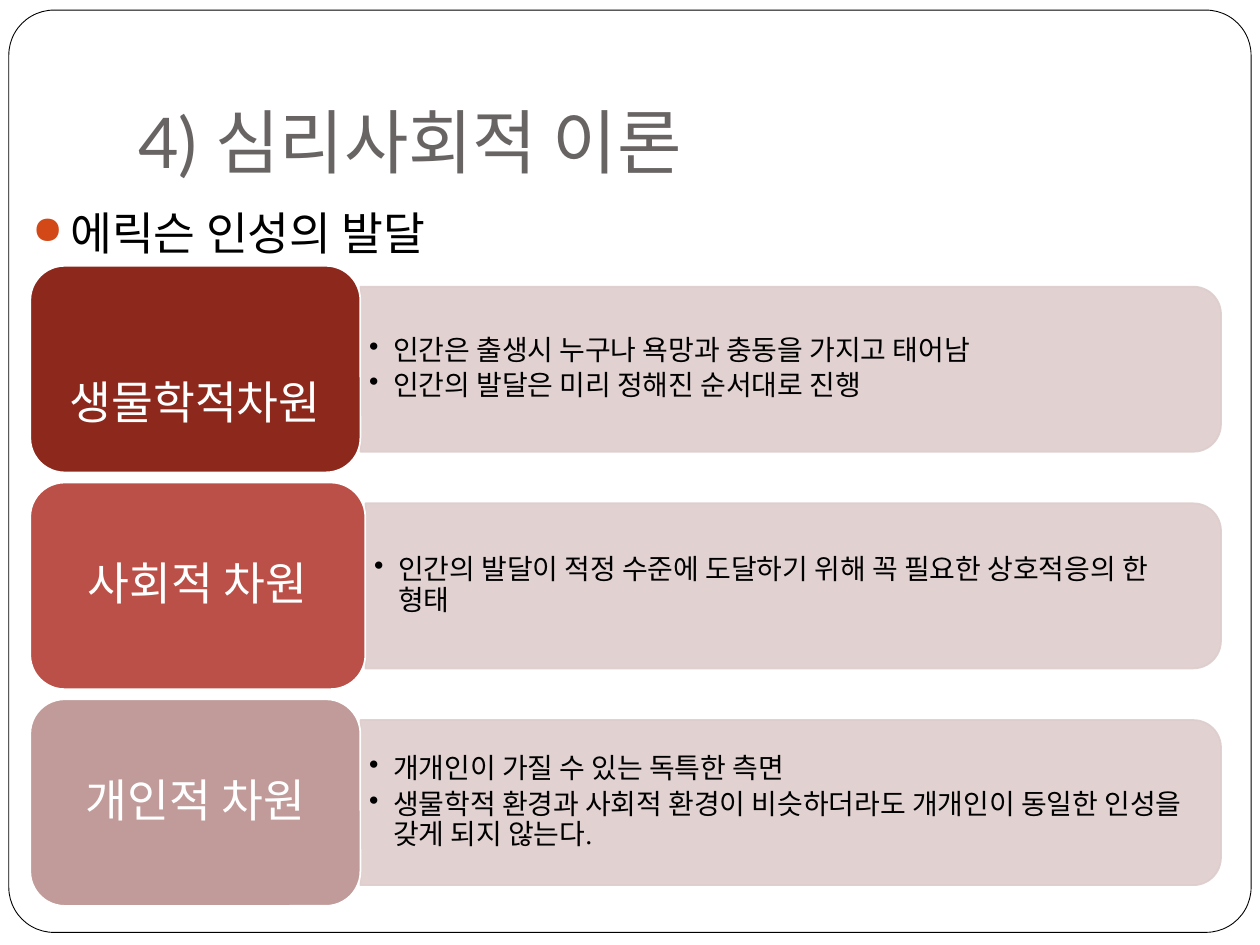
from lxml import etree
from pptx import Presentation
from pptx.dml.color import RGBColor
from pptx.enum.shapes import MSO_SHAPE
from pptx.enum.text import MSO_ANCHOR, PP_ALIGN
from pptx.oxml.ns import qn
from pptx.util import Inches, Pt


def write(frame, lines, margins, bullet=None, indent=0, **style):
    """Fill a text frame; margins run left, top, right, bottom in inches."""
    frame.word_wrap = True
    frame.vertical_anchor = style["anchor"]
    for side, margin in zip(("left", "top", "right", "bottom"), margins):
        setattr(frame, f"margin_{side}", Inches(margin))
    for number, line in enumerate(lines):
        paragraph = frame.paragraphs[0] if number == 0 else frame.add_paragraph()
        for name, value in style["paragraph"].items():
            setattr(paragraph, name, value)
        run = paragraph.add_run()
        run.text = line
        run.font.name = style["font"]
        run.font.size = Pt(style["size"])
        run.font.color.rgb = RGBColor.from_string(style["color"])
        if bullet:
            character, bullet_color, percent = bullet
            properties = paragraph._p.get_or_add_pPr()
            properties.set("marL", str(Inches(indent)))
            properties.set("indent", str(-Inches(indent)))
            color = etree.SubElement(properties, qn("a:buClr"))
            etree.SubElement(color, qn("a:srgbClr"), val=bullet_color)
            etree.SubElement(properties, qn("a:buSzPct"), val=str(percent * 1000))
            etree.SubElement(properties, qn("a:buChar"), char=character)


def add_box(kind, left, top, width, height, fill, line, line_width):
    box = slide.shapes.add_shape(
        kind, Inches(left), Inches(top), Inches(width), Inches(height))
    box.shadow.inherit = False
    box.fill.solid()
    box.fill.fore_color.rgb = RGBColor.from_string(fill)
    box.line.color.rgb = RGBColor.from_string(line)
    box.line.width = Pt(line_width)
    return box


presentation = Presentation()
presentation.slide_width = Inches(10)
presentation.slide_height = Inches(7.5)
slide = presentation.slides.add_slide(presentation.slide_layouts[6])

frame_border = add_box(
    MSO_SHAPE.ROUNDED_RECTANGLE, 0.07, 0.08, 9.86, 7.32, "FFFFFF", "000000", 0.5)
frame_border.adjustments[0] = 0.049

title = slide.shapes.add_textbox(Inches(1), Inches(0.3), Inches(8.5), Inches(1.25))
write(title.text_frame, ["4) 심리사회적 이론"], (0.1, 0.05, 0.1, 0.1),
      anchor=MSO_ANCHOR.BOTTOM, font="Lato", size=40, color="696464", paragraph={})

subject = slide.shapes.add_textbox(Inches(0.16), Inches(1.58), Inches(9.34), Inches(0.55))
write(subject.text_frame, ["에릭슨 인성의 발달"], (0.1, 0.05, 0.1, 0.05),
      bullet=("●", "D34817", 85), indent=0.3, anchor=MSO_ANCHOR.TOP,
      font="Times New Roman", size=26, color="000000",
      paragraph={"space_before": Pt(5.8)})

LABEL_LEFT, LABEL_TOP, LABEL_HEIGHT, ROW_STEP = 0.24, 2.11, 1.64, 1.72
PANEL_RIGHT, PANEL_HEIGHT = 9.69, 1.31

# name, label width, label colour, extra space above the name, points
dimensions = [
    ("생물학적차원", 2.62, "8D291C", 0.57,
     ["인간은 출생시 누구나 욕망과 충동을 가지고 태어남",
      "인간의 발달은 미리 정해진 순서대로 진행"]),
    ("사회적 차원", 2.66, "BA5047", 0,
     ["인간의 발달이 적정 수준에 도달하기 위해 꼭 필요한 상호적응의 한 형태"]),
    ("개인적 차원", 2.62, "C09B99", 0,
     ["개개인이 가질 수 있는 독특한 측면",
      "생물학적 환경과 사회적 환경이 비슷하더라도 개개인이 동일한 인성을 갖게 되지 않는다."]),
]

for row, (name, label_width, label_color, space_above, points) in enumerate(dimensions):
    label_top = LABEL_TOP + row * ROW_STEP
    middle = label_top + LABEL_HEIGHT / 2
    panel_left = LABEL_LEFT + label_width
    panel_width = PANEL_RIGHT - panel_left

    # The panel is an upright shape turned a quarter about its centre.
    panel = add_box(
        MSO_SHAPE.ROUND_2_SAME_RECTANGLE,
        (panel_left + PANEL_RIGHT - PANEL_HEIGHT) / 2, middle - panel_width / 2,
        PANEL_HEIGHT, panel_width, "DECDCD", "DECDCD", 1)
    panel.rotation = 90
    for color in panel._element.spPr.iter(qn("a:srgbClr")):
        etree.SubElement(color, qn("a:alpha"), val="90000")

    details = slide.shapes.add_textbox(
        Inches(panel_left), Inches(middle - 0.59), Inches(panel_width - 0.06), Inches(1.18))
    write(details.text_frame, points, (0.07, 0.03, 0.07, 0.03),
          bullet=("•", "000000", 100), indent=0.19, anchor=MSO_ANCHOR.MIDDLE,
          font="Times New Roman", size=16, color="000000",
          paragraph={"line_spacing": 0.9, "space_after": Pt(2.9)})

    label = add_box(
        MSO_SHAPE.ROUNDED_RECTANGLE, LABEL_LEFT, label_top, label_width, LABEL_HEIGHT,
        label_color, "FFFFFF", 1)
    write(label.text_frame, [name], (0.11, 0.05 + space_above, 0.11, 0.05),
          anchor=MSO_ANCHOR.MIDDLE, font="Times New Roman", size=26, color="FFFFFF",
          paragraph={"alignment": PP_ALIGN.CENTER, "line_spacing": 0.9})

presentation.save("out.pptx")
